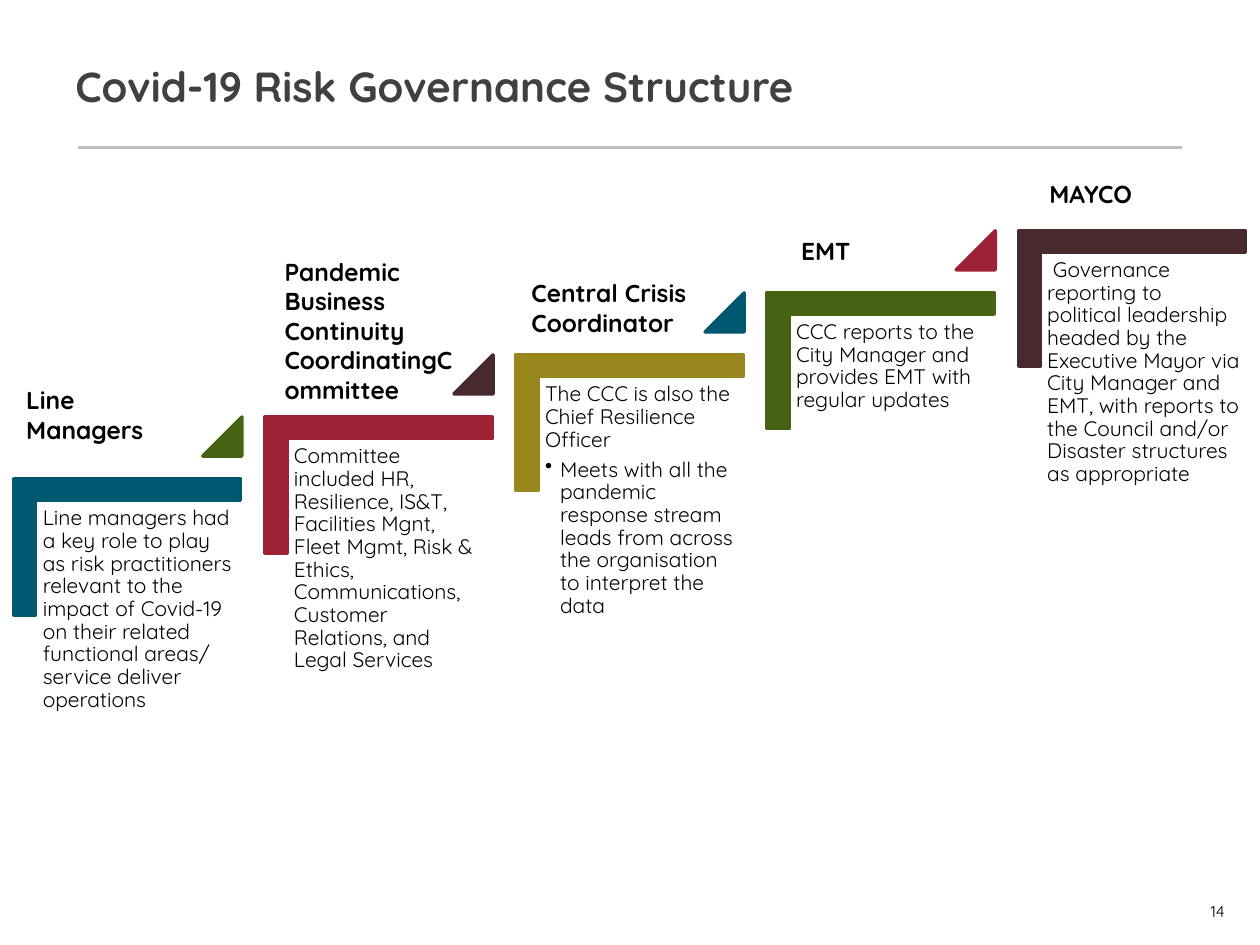
from dataclasses import dataclass
from typing import NamedTuple

from lxml.etree import SubElement
from pptx import Presentation
from pptx.dml.color import RGBColor
from pptx.enum.shapes import MSO_CONNECTOR, MSO_SHAPE
from pptx.enum.text import MSO_ANCHOR, MSO_AUTO_SIZE, PP_ALIGN
from pptx.oxml.ns import qn
from pptx.shapes.autoshape import Shape
from pptx.slide import Slide
from pptx.util import Inches, Pt

WIDTH, HEIGHT = Inches(10), Inches(7.5)


@dataclass(frozen=True)
class Theme:
    """Colours, type sizes and line width of the slide."""

    font: str = "Quicksand"
    text: str = "000000"
    title: str = "404040"
    rule: str = "BFBFBF"
    teal: str = "005870"
    red: str = "9D2235"
    gold: str = "98871F"
    green: str = "446414"
    brown: str = "47292E"
    title_size: float = 24
    heading_size: float = 14
    body_size: float = 12
    number_size: float = 9
    outline: float = 2


class Frame(NamedTuple):
    """A box in percent of the slide's width and height."""

    left: float
    top: float
    width: float
    height: float

    def climbed(self, step: int) -> "Frame":
        """Return the same box moved up the staircase."""
        return self._replace(left=self.left + step * COLUMN, top=self.top - step * RISE)

    def lengths(self) -> tuple[int, int, int, int]:
        """Return the box in slide units."""
        return (across(self.left), down(self.top), across(self.width), down(self.height))


class Stage(NamedTuple):
    """One step of the governance staircase."""

    heading: str
    heading_frame: Frame
    colour: str
    description: str
    duty: str = ""
    next_marker: str = ""


THEME = Theme()
COLUMN, RISE = 19.93, 6.57
TITLE = Frame(5, 4, 90, 10.13)
PAGE_NUMBER = Frame(91.6, 94.27, 5.6, 3.33)
BRACKET = Frame(4.7, 45.87, 10.8, 24)
DESCRIPTION = Frame(2.9, 53.07, 16.3, 19.07)
MARKER = Frame(16.1, 44.13, 3.1, 4.13)

STAGES = (
    Stage("Line Managers", Frame(1.1, 40.13, 15, 7.6), THEME.teal,
          "Line managers had a key role to play as risk practitioners relevant to the impact of "
          "Covid-19 on their related functional areas/ service deliver operations",
          next_marker=THEME.green),
    Stage("Pandemic Business\nContinuity CoordinatingCommittee", Frame(21.6, 26.53, 15.8, 17.07),
          THEME.red,
          "Committee included HR, Resilience, IS&T, Facilities Mgnt, Fleet Mgmt, Risk & Ethics, "
          "Communications, Customer Relations, and Legal Services",
          next_marker=THEME.brown),
    Stage("Central Crisis Coordinator", Frame(41.2, 28.8, 15, 7.6), THEME.gold,
          "The CCC is also the Chief Resilience Officer",
          duty="Meets with all the pandemic response stream leads from across the organisation "
               "to interpret the data",
          next_marker=THEME.teal),
    Stage("EMT", Frame(62.6, 24.27, 15, 4.53), THEME.green,
          "CCC reports to the City Manager and provides EMT with regular updates",
          next_marker=THEME.red),
    Stage("MAYCO", Frame(82.3, 18.27, 15, 4.53), THEME.brown,
          " Governance reporting to political leadership headed by the Executive Mayor via City "
          "Manager and EMT, with reports to the Council and/or Disaster structures as appropriate"),
)


def across(share: float) -> int:
    """Turn a percentage of the slide's width into a length."""
    return round(WIDTH * share / 100)


def down(share: float) -> int:
    """Turn a percentage of the slide's height into a length."""
    return round(HEIGHT * share / 100)


def add_text(slide: Slide, frame: Frame, text: str, size: float,
             colour: str = THEME.text, bold: bool = False) -> Shape:
    """Add a wrapped text box in one type style."""
    box = slide.shapes.add_textbox(*frame.lengths())
    box.text_frame.word_wrap = True
    box.text_frame.text = text
    for paragraph in box.text_frame.paragraphs:
        for run in paragraph.runs:
            run.font.name = THEME.font
            run.font.size = Pt(size)
            run.font.bold = bold
            run.font.color.rgb = RGBColor.from_string(colour)
    return box


def set_insets(box: Shape, left: float, top: float, right: float, bottom: float) -> None:
    """Set the inner margins of a text box in inches."""
    text = box.text_frame
    text.margin_left, text.margin_top = Inches(left), Inches(top)
    text.margin_right, text.margin_bottom = Inches(right), Inches(bottom)


def add_solid(slide: Slide, preset: MSO_SHAPE, frame: Frame, colour: str,
              adjustments: tuple[float, ...]) -> Shape:
    """Add a preset shape whose fill and outline share one colour."""
    solid = slide.shapes.add_shape(preset, *frame.lengths())
    solid.shadow.inherit = False
    for index, value in enumerate(adjustments):
        solid.adjustments[index] = value
    solid.fill.solid()
    solid.fill.fore_color.rgb = solid.line.color.rgb = RGBColor.from_string(colour)
    solid.line.width = Pt(THEME.outline)
    return solid


def add_description(slide: Slide, stage: Stage, frame: Frame) -> None:
    """Add a stage's description and its bulleted duty, if any."""
    lines = [line for line in (stage.description, stage.duty) if line]
    box = add_text(slide, frame, "\n".join(lines), THEME.body_size)
    set_insets(box, 0.05, 0.05, 0.05, 0.05)
    for level, paragraph in enumerate(box.text_frame.paragraphs):
        paragraph.level = level
        paragraph.line_spacing = 0.9
        paragraph.space_after = Pt(1.8 if level else 4.2)
        if level:
            properties = paragraph._p.get_or_add_pPr()
            properties.set("marL", str(Inches(0.12)))
            properties.set("indent", str(-Inches(0.12)))
            SubElement(properties, qn("a:buChar"), char="•")


def add_stage(slide: Slide, stage: Stage, step: int) -> None:
    """Draw a stage's bracket, description and marker to the next stage."""
    bracket = add_solid(slide, MSO_SHAPE.CORNER, BRACKET.climbed(step), stage.colour, (0.16, 0.16))
    bracket.rotation = 90
    add_description(slide, stage, DESCRIPTION.climbed(step))
    if stage.next_marker:
        add_solid(slide, MSO_SHAPE.ISOSCELES_TRIANGLE, MARKER.climbed(step),
                  stage.next_marker, (1,))


def add_title(slide: Slide) -> None:
    """Draw the title above its rule."""
    rule = slide.shapes.add_connector(MSO_CONNECTOR.STRAIGHT, across(6.2), down(15.6),
                                      across(93.8), down(15.6))
    rule.line.color.rgb = RGBColor.from_string(THEME.rule)
    rule.line.width = Pt(THEME.outline)
    SubElement(rule._element.spPr, qn("a:effectLst"))
    title = add_text(slide, TITLE, "Covid-19 Risk Governance Structure", THEME.title_size,
                     THEME.title, bold=True)
    title.text_frame.vertical_anchor = MSO_ANCHOR.MIDDLE


def add_page_number(slide: Slide) -> None:
    """Draw the page number at the lower right."""
    number = add_text(slide, PAGE_NUMBER, "14", THEME.number_size)
    set_insets(number, 0.08, 0.08, 0, 0)
    number.text_frame.vertical_anchor = MSO_ANCHOR.MIDDLE
    number.text_frame.paragraphs[0].alignment = PP_ALIGN.RIGHT


def main() -> None:
    """Build and save the slide."""
    deck = Presentation()
    deck.slide_width, deck.slide_height = WIDTH, HEIGHT
    slide = deck.slides.add_slide(deck.slide_layouts[6])
    add_title(slide)
    add_page_number(slide)
    for step, stage in enumerate(STAGES):
        add_stage(slide, stage, step)
    for stage in STAGES:
        heading = add_text(slide, stage.heading_frame, stage.heading, THEME.heading_size, bold=True)
        heading.text_frame.auto_size = MSO_AUTO_SIZE.SHAPE_TO_FIT_TEXT
    deck.save("out.pptx")


if __name__ == "__main__":
    main()
